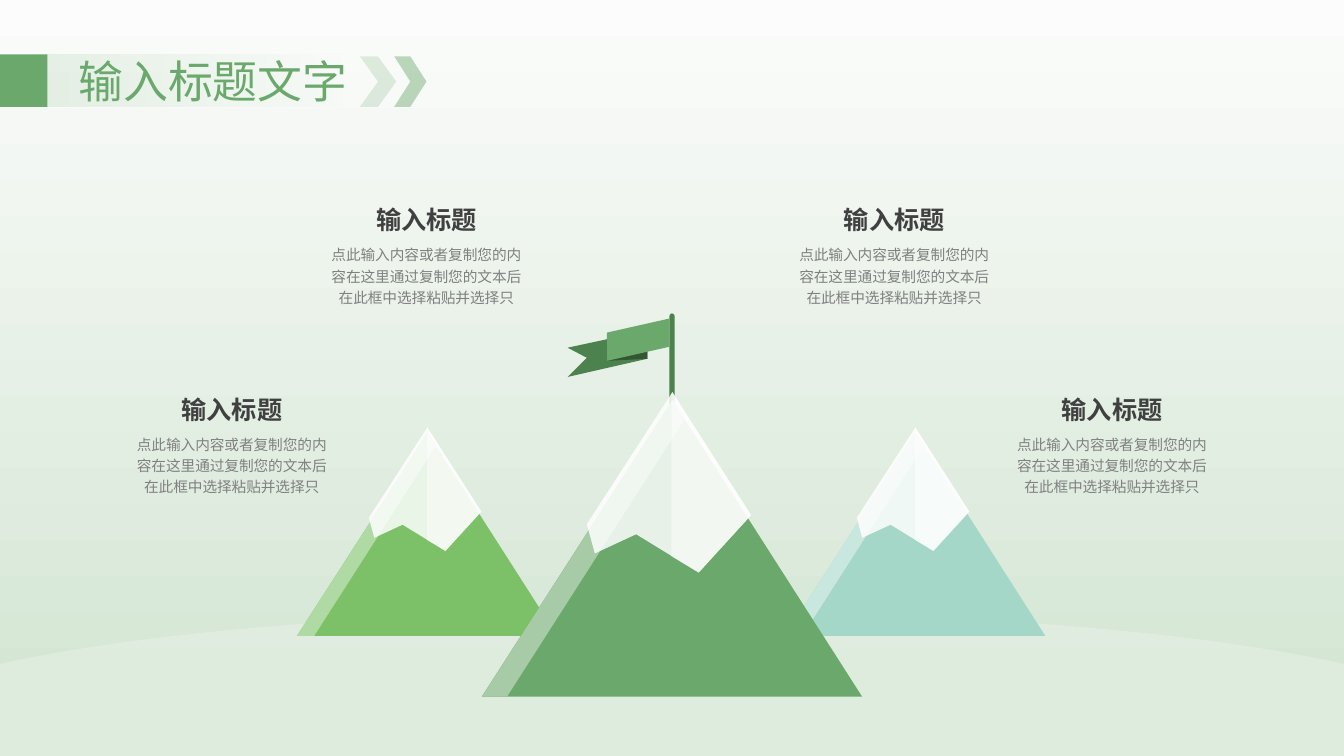
import lxml.etree
import pptx
import pptx.util
import pptx.dml.color
import pptx.enum.shapes
import pptx.enum.text
import pptx.oxml.ns
from dataclasses import dataclass

Inches = pptx.util.Inches
PRESET = pptx.enum.shapes.MSO_SHAPE


@dataclass(frozen=True)
class Theme:
    font: str = "Noto Sans CJK SC"
    title_size: float = 32
    heading_size: float = 18
    body_size: float = 10.5
    green: str = "6AA86B"
    dark_green: str = "4C824D"
    fold_green: str = "335633"
    heading: str = "404040"
    body: str = "808080"
    snow: str = "FFFFFF"
    hill: str = "E1EEE1"
    sky_top: str = "FBFCFB"
    sky_bottom: str = "D1E4D1"


THEME = Theme()

# Content
TITLE = "输入标题文字"
HEADING = "输入标题"
BODY = "点此输入内容或者复制您的内容在这里通过复制您的文本后在此框中选择粘贴并选择只"
CAPTIONS = [  # centre x, top, heading, body
    (2.3, 3.86, HEADING, BODY),
    (4.23, 1.98, HEADING, BODY),
    (8.87, 1.98, HEADING, BODY),
    (11.03, 3.86, HEADING, BODY),
]
SIDE_MOUNTAINS = [  # peak x, peak y, scale, face, shaded side
    (4.24, 4.24, 0.685, "7CC167", "B0DAA4"),
    (9.08, 4.24, 0.685, "A4D7C8", "C8E7DE"),
]
MAIN_MOUNTAIN = (6.67, 3.89, 1, THEME.green, "A6CBA6")

# Mountain outlines, measured from the snow peak
FACE = [(0, 0.08), (1.88, 3.02), (-1.89, 3.02)]
SIDE = [(0.12, 0.27), (0, 0.08), (-1.89, 3.02), (-1.64, 3.02)]
SNOW = [(0, 0), (0.78, 1.22), (0.26, 1.79), (-0.36, 1.41), (-0.77, 1.6), (-0.85, 1.31)]
SNOW_LIGHT = [(0, 0), (-0.01, 0.01), (-0.01, 1.63), (0.26, 1.79), (0.78, 1.22), (0.02, 0.04)]

# Flag outlines
TAIL = [(5.63, 3.74), (6.42, 3.56), (6.42, 3.28), (5.63, 3.45), (5.82, 3.55)]
FOLD = [(6.02, 3.58), (6.42, 3.56), (6.42, 3.28), (6.02, 3.37)]
BANNER = [(6.02, 3.58), (6.64, 3.44), (6.64, 3.16), (6.02, 3.3)]

# Hill outline: Bezier control points of its crest, left to right
CREST = [
    [(0.03, 6.58), (1.47, 6.26), (3.91, 6.06), (6.67, 6.06)],
    [(6.67, 6.06), (9.43, 6.06), (11.86, 6.26), (13.3, 6.58)],
]
CURVE_STEPS = 24


def rgb(color):
    return pptx.dml.color.RGBColor.from_string(color)


def set_alpha(color_parent, percent):
    color = color_parent.find(".//" + pptx.oxml.ns.qn("a:srgbClr"))
    alpha = lxml.etree.SubElement(color, pptx.oxml.ns.qn("a:alpha"))
    alpha.set("val", str(percent * 1000))


def paint(shape, color, opacity=100):
    shape.shadow.inherit = False
    shape.line.fill.background()
    shape.fill.solid()
    shape.fill.fore_color.rgb = rgb(color)
    if opacity < 100:
        set_alpha(shape.element.spPr, opacity)


def paint_gradient(fill, colors, angle):
    fill.gradient()
    fill.gradient_angle = angle
    for stop, color in zip(fill.gradient_stops, colors):
        stop.color.rgb = rgb(color)


def add_outline(shapes, points, color, opacity=100):
    corners = [(Inches(x), Inches(y)) for x, y in points]
    builder = shapes.build_freeform(*corners[0])
    builder.add_line_segments(corners[1:], close=True)
    paint(builder.convert_to_shape(), color, opacity)


def add_preset(shapes, preset, area, color, opacity=100):
    shape = shapes.add_shape(preset, *map(Inches, area))
    paint(shape, color, opacity)
    return shape


def add_text(shapes, area, text, size, color, bold=False, centred=True,
             spacing=None, anchor=pptx.enum.text.MSO_ANCHOR.TOP):
    box = shapes.add_textbox(*map(Inches, area))
    frame = box.text_frame
    frame.word_wrap = True
    frame.auto_size = pptx.enum.text.MSO_AUTO_SIZE.SHAPE_TO_FIT_TEXT
    frame.vertical_anchor = anchor
    para = frame.paragraphs[0]
    if centred:
        para.alignment = pptx.enum.text.PP_ALIGN.CENTER
    if spacing:
        para.line_spacing = spacing
    span = para.add_run()
    span.text = text
    span.font.size = pptx.util.Pt(size)
    span.font.bold = bold
    span.font.color.rgb = rgb(color)
    span.font.name = THEME.font
    east_asian = lxml.etree.SubElement(span.font._element, pptx.oxml.ns.qn("a:ea"))
    east_asian.set("typeface", THEME.font)


def add_mountain(shapes, peak_x, peak_y, scale, face, side):
    layers = [(FACE, face, 100), (SIDE, side, 100),
              (SNOW, THEME.snow, 84), (SNOW_LIGHT, THEME.snow, 47)]
    for outline, color, opacity in layers:
        points = [(peak_x + scale * x, peak_y + scale * y) for x, y in outline]
        add_outline(shapes, points, color, opacity)


def curve_point(controls, t):
    weights = ((1 - t) ** 3, 3 * t * (1 - t) ** 2, 3 * t ** 2 * (1 - t), t ** 3)
    return tuple(sum(w * c[axis] for w, c in zip(weights, controls)) for axis in (0, 1))


def main():
    deck = pptx.Presentation()
    deck.slide_width, deck.slide_height = Inches(13.33), Inches(7.5)
    page = deck.slides.add_slide(deck.slide_layouts[6])
    paint_gradient(page.background.fill, (THEME.sky_top, THEME.sky_bottom), 270)

    # Hill
    crest = [curve_point(controls, step / CURVE_STEPS)
             for controls in CREST for step in range(CURVE_STEPS + 1)]
    hill = [(0, 6.59), *crest, (13.33, 6.59), (13.33, 7.5), (0, 7.5)]
    add_outline(page.shapes, hill, THEME.hill, 80)

    # Side mountains
    for mountain in SIDE_MOUNTAINS:
        add_mountain(page.shapes.add_group_shape().shapes, *mountain)

    # Main mountain with its flag
    summit = page.shapes.add_group_shape().shapes
    add_outline(summit, TAIL, THEME.dark_green)
    pole = add_preset(summit, PRESET.ROUNDED_RECTANGLE, (6.64, 3.11, 0.05, 0.97), THEME.dark_green)
    pole.adjustments[0] = 0.5
    add_outline(summit, FOLD, THEME.fold_green)
    add_outline(summit, BANNER, THEME.green)
    add_mountain(summit, *MAIN_MOUNTAIN)

    # Captions
    for centre, top, heading, body in CAPTIONS:
        add_text(page.shapes, (centre - 1.085, top + 0.38, 2.17, 0.74), body,
                 THEME.body_size, THEME.body, spacing=1.2)
        add_text(page.shapes, (centre - 0.665, top, 1.33, 0.4), heading,
                 THEME.heading_size, THEME.heading, bold=True,
                 anchor=pptx.enum.text.MSO_ANCHOR.MIDDLE)

    # Title bar
    header = page.shapes.add_group_shape().shapes
    band = add_preset(header, PRESET.RECTANGLE, (0.47, 0.54, 3.05, 0.52), THEME.green)
    paint_gradient(band.fill, (THEME.green, THEME.green), 0)
    for stop, opacity in zip(band.element.spPr.iter(pptx.oxml.ns.qn("a:gs")), (14, 0)):
        set_alpha(stop, opacity)
    add_text(header, (0.68, 0.48, 3.45, 0.64), TITLE, THEME.title_size, THEME.green, centred=False)
    add_preset(header, PRESET.RECTANGLE, (0, 0.54, 0.47, 0.52), THEME.green)
    for left, width, opacity in ((3.57, 0.36, 20), (3.91, 0.32, 44)):
        add_preset(header, PRESET.CHEVRON, (left, 0.56, width, 0.5), THEME.green, opacity)

    deck.save("out.pptx")


if __name__ == "__main__":
    main()
